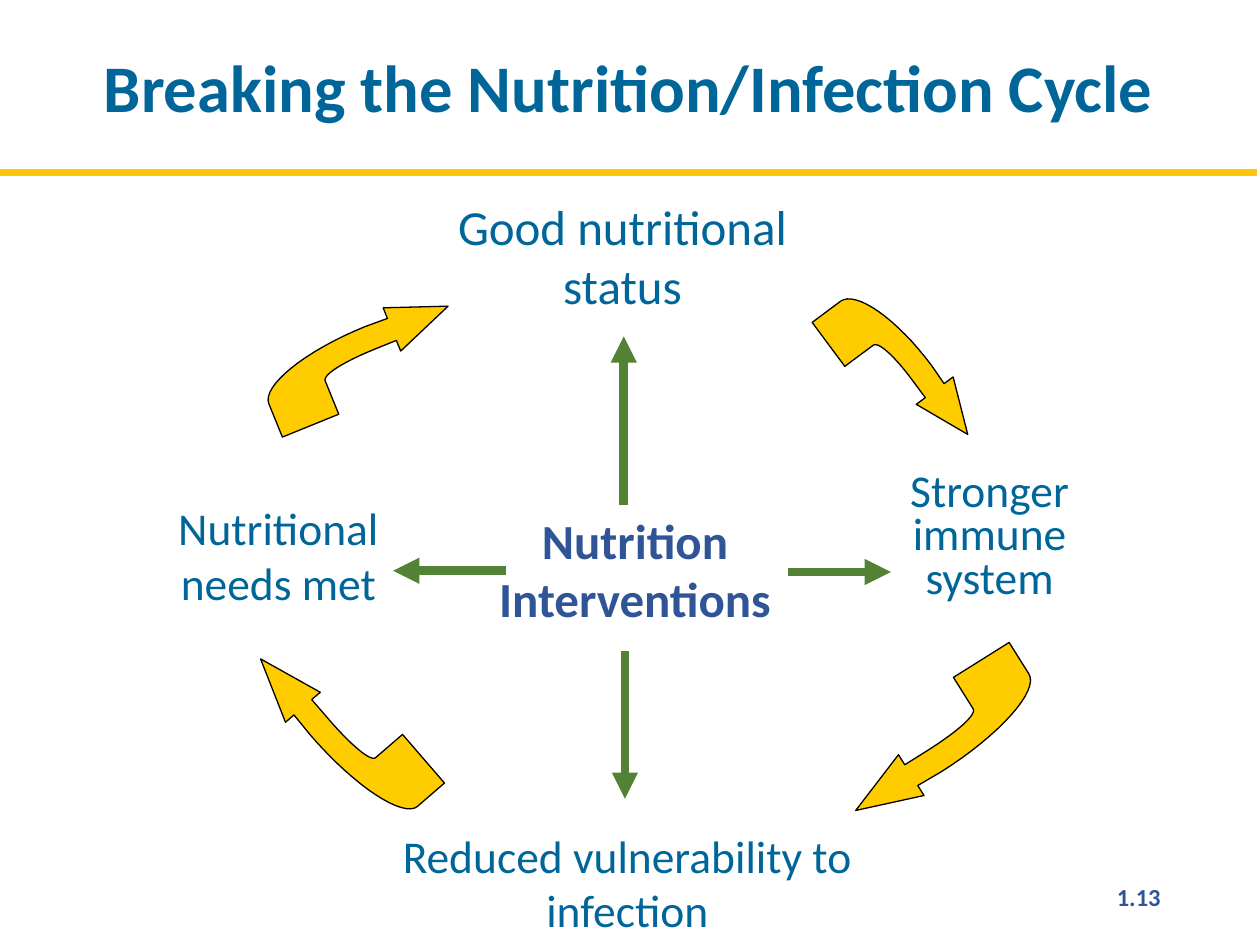
from lxml.etree import SubElement
from pptx import Presentation
from pptx.dml.color import RGBColor
from pptx.enum.shapes import MSO_CONNECTOR
from pptx.enum.text import MSO_ANCHOR, PP_ALIGN
from pptx.oxml.ns import qn
from pptx.util import Inches, Pt

COLORS = {"teal": "006699", "blue": "2F5597", "green": "548235",
          "yellow": "FFCC00", "rule": "FFC60B", "black": "000000"}
FONT = "Calibri"

TITLE = ("Breaking the Nutrition/Infection Cycle", (-0.02, 0, 10.02, 1.37), 38, "teal", True)
PAGE_NUMBER = ("1.13", (7.06, 6.95, 2.25, 0.4), 14, "blue", True)
CENTER = ("Nutrition Interventions", (3.84, 4, 2.4, 1.04), 28, "blue", True)
IMMUNE = ("Stronger immune system", (6.62, 3.7, 2.47, 1.16), 26, "teal", False)
STAGES = [
    ("Good nutritional status", (3.05, 1.51, 3.78, 1.04), 28, "teal", False),
    ("Nutritional needs met", (1.25, 3.92, 1.92, 0.98), 26, "teal", False),
    ("Reduced vulnerability to infection", (2.68, 6.52, 4.6, 0.98), 26, "teal", False),
]
CYCLE_ARROWS = [
    ((6.41, 2.63, 1.45, 0.64), 53.4),
    ((6.58, 5.51, 1.74, 0.67), 147.9),
    ((1.88, 5.46, 1.7, 0.64), 229.2),
    ((2.06, 2.54, 1.61, 0.65), 337.9),
]
INTERVENTION_ARROWS = [
    ((4.95, 4.01), (4.95, 2.67)),
    ((6.25, 4.54), (7.07, 4.54)),
    ((4.96, 5.17), (4.96, 6.34)),
    ((4.02, 4.53), (3.12, 4.53)),
]
TITLE_RULE = ((-0.02, 1.37), (9.98, 1.37))

OUTER_CURVE = [(0.58, 0.13), (0.26, 0.13), (0, 0.33), (0, 0.56)]
INNER_CURVE = [(0.3, 0.56), (0.3, 0.48), (0.42, 0.43), (0.58, 0.43)]
CURVE_STEPS = 16


def curve_points(controls):
    points = []
    for step in range(CURVE_STEPS + 1):
        t = step / CURVE_STEPS
        weights = ((1 - t) ** 3, 3 * t * (1 - t) ** 2, 3 * t ** 2 * (1 - t), t ** 3)
        points.append(tuple(sum(weight * point[axis] for weight, point in zip(weights, controls))
                            for axis in (0, 1)))
    return points


ARROW_OUTLINE = [(1, 0.28), (0.7, 0), (0.7, 0.14), *curve_points(OUTER_CURVE),
                 (0, 1), (0.3, 1), *curve_points(INNER_CURVE), (0.7, 0.43), (0.7, 0.57)]


def rgb(name):
    return RGBColor.from_string(COLORS[name])


def add_text(slide, label, align=PP_ALIGN.CENTER, anchor=MSO_ANCHOR.TOP, line_spacing=None):
    text, box, size, color, bold = label
    text_frame = slide.shapes.add_textbox(*map(Inches, box)).text_frame
    text_frame.word_wrap = True
    text_frame.vertical_anchor = anchor
    text_frame.text = text
    paragraph = text_frame.paragraphs[0]
    paragraph.alignment = align
    paragraph.line_spacing = line_spacing
    font = paragraph.runs[0].font
    font.name, font.size, font.bold = FONT, Pt(size), bold
    font.color.rgb = rgb(color)


def add_cycle_arrow(slide, box, rotation):
    left, top, width, height = map(Inches, box)
    points = [(left + x * width, top + y * height) for x, y in ARROW_OUTLINE]
    builder = slide.shapes.build_freeform(*points[0])
    builder.add_line_segments(points[1:], close=True)
    shape = builder.convert_to_shape()
    shape.rotation = rotation
    shape.shadow.inherit = False
    shape.fill.solid()
    shape.fill.fore_color.rgb = rgb("yellow")
    shape.line.color.rgb = rgb("black")
    shape.line.width = Pt(0.75)


def add_line(slide, start, end, color, width, arrowhead=False):
    connector = slide.shapes.add_connector(MSO_CONNECTOR.STRAIGHT, *map(Inches, start + end))
    connector.line.color.rgb = rgb(color)
    connector.line.width = Pt(width)
    if arrowhead:
        SubElement(connector.line._get_or_add_ln(), qn("a:tailEnd"), type="triangle")
    SubElement(connector._element.spPr, qn("a:effectLst"))


def main():
    presentation = Presentation()
    presentation.slide_width, presentation.slide_height = Inches(10), Inches(7.5)
    slide = presentation.slides.add_slide(presentation.slide_layouts[6])

    for box, rotation in CYCLE_ARROWS:
        add_cycle_arrow(slide, box, rotation)
    for label in STAGES:
        add_text(slide, label)
    add_text(slide, IMMUNE, line_spacing=0.8)
    for start, end in INTERVENTION_ARROWS:
        add_line(slide, start, end, "green", 5, arrowhead=True)
    add_text(slide, TITLE, anchor=MSO_ANCHOR.MIDDLE)
    add_text(slide, CENTER)
    add_line(slide, *TITLE_RULE, "rule", 4)
    add_text(slide, PAGE_NUMBER, align=PP_ALIGN.RIGHT)

    presentation.save("out.pptx")


if __name__ == "__main__":
    main()
